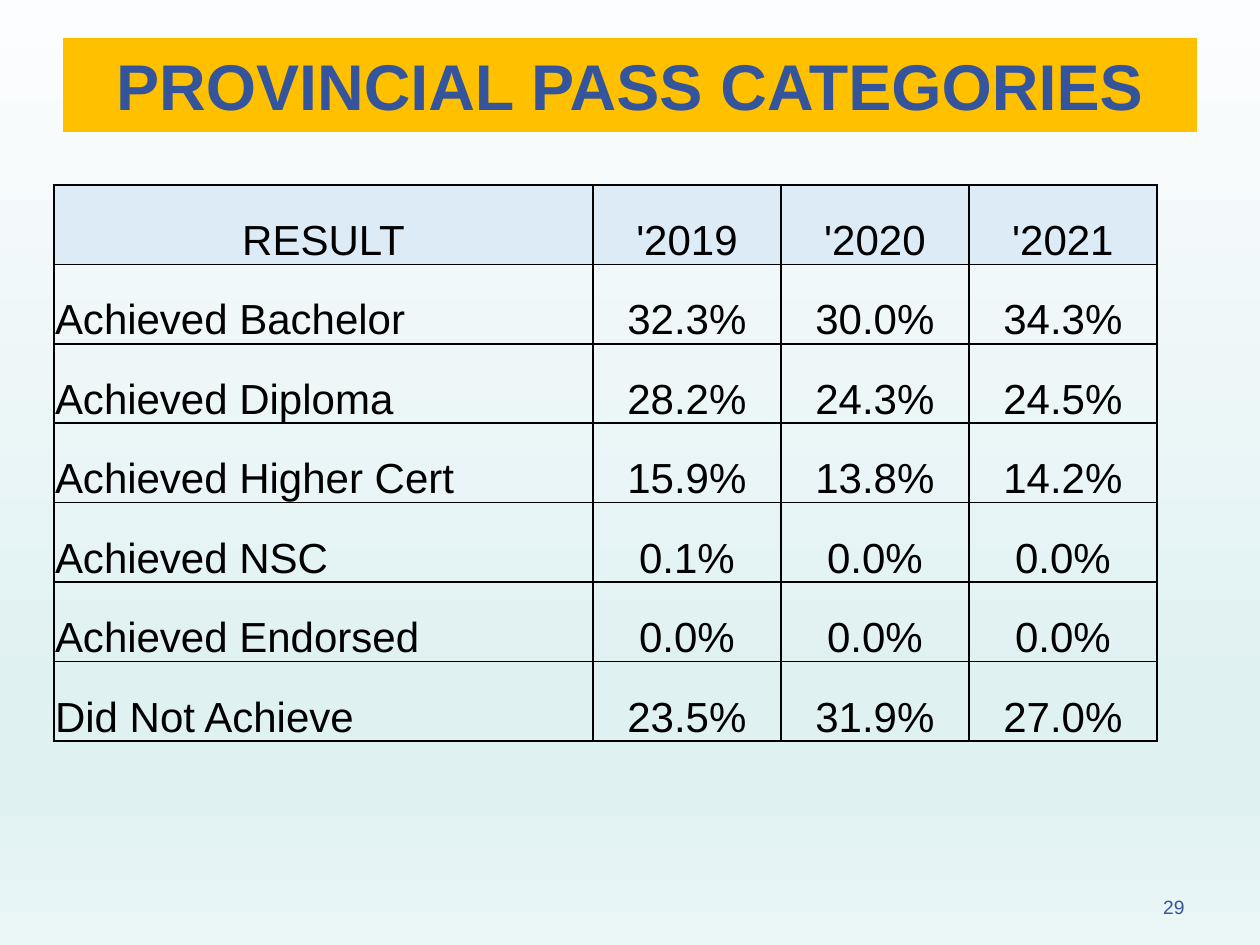
"""Build the provincial pass categories slide with its results table."""
from lxml.etree import SubElement
from pptx import Presentation
from pptx.dml.color import RGBColor
from pptx.enum.text import MSO_ANCHOR, MSO_AUTO_SIZE, PP_ALIGN
from pptx.oxml import parse_xml
from pptx.oxml.ns import nsdecls, qn
from pptx.util import Pt

PX = 914400 / 126
INK, BLUE, GOLD, HEADER = "000000", "34549C", "FFC000", "DDEBF7"
SKY = [(0, "FCFDFE"), (74, "E0F1F2"), (83, "E0F1F2"), (100, "EBF6F7")]
RESULTS = [
    ("RESULT", "'2019", "'2020", "'2021"),
    ("Achieved Bachelor", "32.3%", "30.0%", "34.3%"),
    ("Achieved Diploma", "28.2%", "24.3%", "24.5%"),
    ("Achieved Higher Cert", "15.9%", "13.8%", "14.2%"),
    ("Achieved NSC", "0.1%", "0.0%", "0.0%"),
    ("Achieved Endorsed", "0.0%", "0.0%", "0.0%"),
    ("Did Not Achieve", "23.5%", "31.9%", "27.0%"),
]


def emu(*lengths):
    return [round(length * PX) for length in lengths]


def write(frame, text, size, color, align, bold=False):
    frame.text = text
    line = frame.paragraphs[0]
    line.alignment = align
    font = line.runs[0].font
    font.name, font.size, font.bold = "Arial", Pt(size), bold
    font.color.rgb = RGBColor.from_string(color)


prs = Presentation()
prs.slide_width, prs.slide_height = emu(1260, 945)
slide = prs.slides.add_slide(prs.slide_layouts[5])

sky = slide.background.fill
sky.gradient()
sky.gradient_angle = 270
stops = slide.element.find(".//" + qn("a:gsLst"))
stops.clear()
for percent, color in SKY:
    stop = SubElement(stops, qn("a:gs"), pos=str(percent * 1000))
    SubElement(stop, qn("a:srgbClr"), val=color)

title = slide.shapes.title
title.left, title.top, title.width, title.height = emu(63, 38, 1134, 94)
title.fill.solid()
title.fill.fore_color.rgb = RGBColor.from_string(GOLD)
title.text_frame.auto_size = MSO_AUTO_SIZE.NONE
title.text_frame.vertical_anchor = MSO_ANCHOR.MIDDLE
write(title.text_frame, "PROVINCIAL PASS CATEGORIES", 36.9, BLUE, PP_ALIGN.CENTER, True)

page_number = slide.shapes.add_textbox(*emu(903, 892, 294, 34)).text_frame
page_number.word_wrap = True
write(page_number, "29", 11, BLUE, PP_ALIGN.RIGHT)
page_number.paragraphs[0].line_spacing = 0.9
page_number.paragraphs[0].space_after = Pt(6)

results = slide.shapes.add_table(len(RESULTS), 4, *emu(54, 185, 1102, 556)).table
results.first_row = results.horz_banding = False
for column, width in zip(results.columns, emu(539, 188, 188, 188)):
    column.width = width

for r, record in enumerate(RESULTS):
    for c, value in enumerate(record):
        cell = results.cell(r, c)
        align = PP_ALIGN.LEFT if r and c == 0 else PP_ALIGN.CENTER
        write(cell.text_frame, value, 24, INK, align)
        cell.vertical_anchor = MSO_ANCHOR.BOTTOM
        cell.margin_left, cell.margin_right, cell.margin_top, cell.margin_bottom = emu(1, 1, 1, 0)
        if r == 0:
            cell.fill.solid()
            cell.fill.fore_color.rgb = RGBColor.from_string(HEADER)
        else:
            cell.fill.background()
        properties = cell._tc.get_or_add_tcPr()
        for position, side in enumerate("LRTB"):
            properties.insert(position, parse_xml(
                f'<a:ln{side} {nsdecls("a")} w="12700"><a:solidFill>'
                f'<a:srgbClr val="{INK}"/></a:solidFill></a:ln{side}>'))

prs.save("out.pptx")
